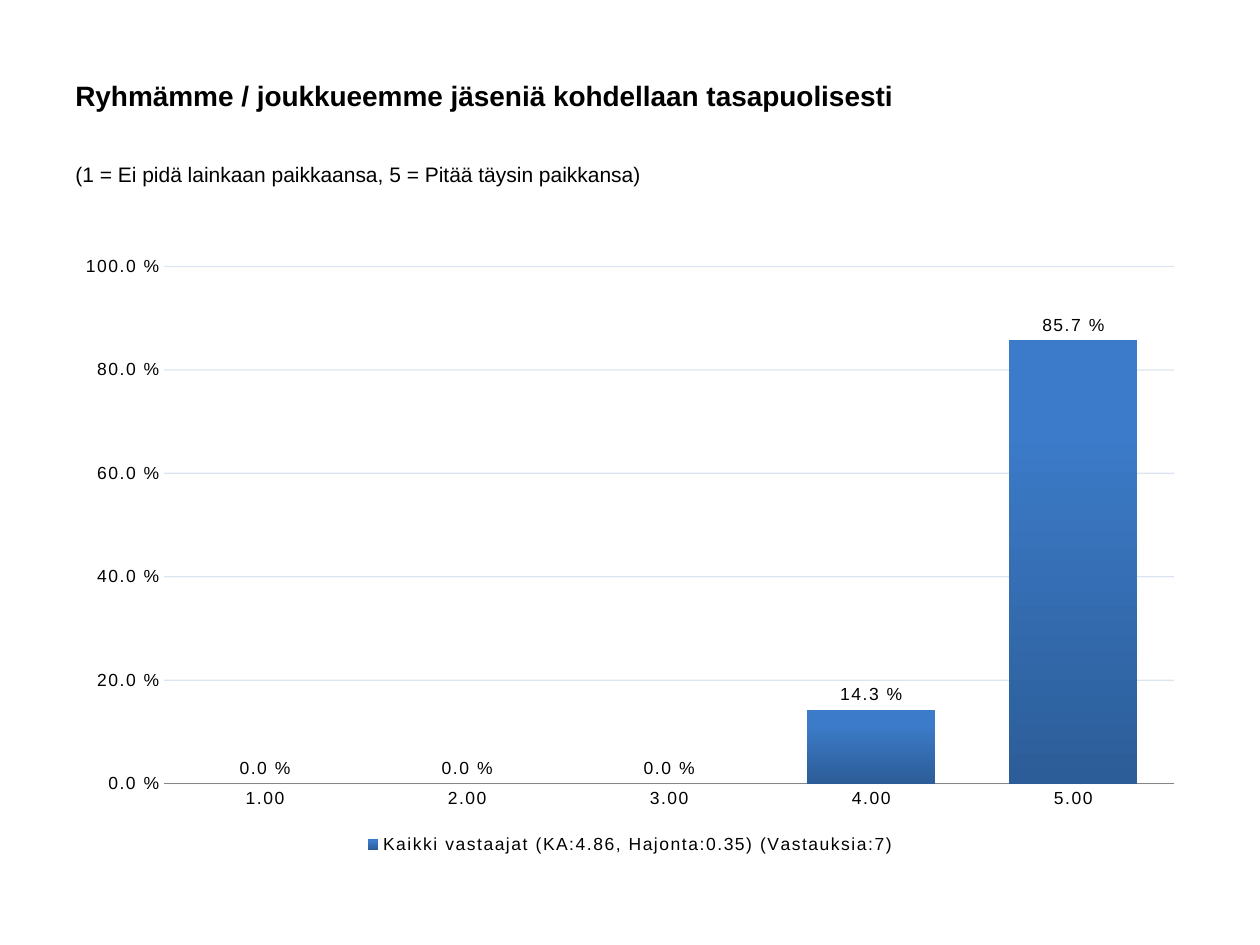
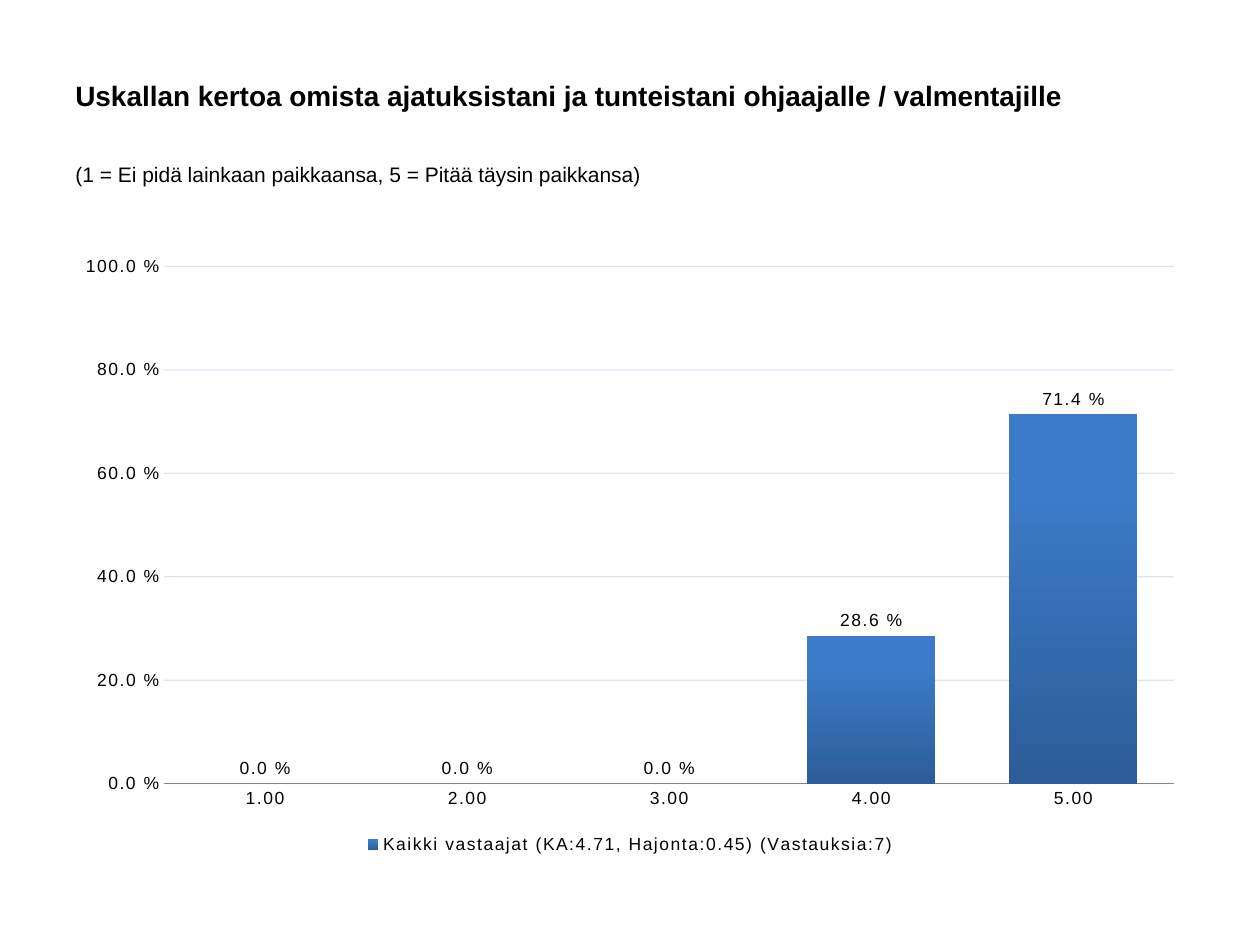
from dataclasses import dataclass

from lxml import etree
from pptx import Presentation
from pptx import util as u
from pptx.chart import data as cd
from pptx.dml.color import RGBColor
from pptx.enum import chart as ch
from pptx.enum import text as tx
from pptx.oxml import ns


@dataclass(frozen=True)
class Theme:
    font: str = "Arial"
    ink: str = "000000"
    grid: str = "4F81BD"
    axis: str = "868686"
    low: str = "2C5D98"
    high: str = "3C7BC9"
    title: int = 16
    note: int = 12
    chart: int = 10
    track: int = 100  # chart letter spacing, hundredths of a point


LOOK = Theme()
WIDE, HIGH = u.Inches(10), u.Inches(7.5)
COLS, ROWS = 20, 100

# left, top, width, height in columns and rows
HEAD = (1, 4.8, 18, 10.53)
NOTE = (1, 16.4, 18, 7.87)
PLOT = (1, 25.87, 18, 65.07)
# inner plot area as shares of the chart
INNER = {"x": 0.089, "y": 0.036, "w": 0.891, "h": 0.841}

SCALE = "(1 = Ei pidä lainkaan paikkaansa, 5 = Pitää täysin paikkansa)"
CATS = ["1.00", "2.00", "3.00", "4.00", "5.00"]
FORMAT = r"0.0\ %"
PAGES = [
    ("Ryhmämme / joukkueemme jäseniä kohdellaan tasapuolisesti",
     "Kaikki vastaajat (KA:4.86, Hajonta:0.35) (Vastauksia:7)",
     [0, 0, 0, 0.143, 0.857]),
    ("Uskallan kertoa omista ajatuksistani ja tunteistani ohjaajalle / valmentajille",
     "Kaikki vastaajat (KA:4.71, Hajonta:0.45) (Vastauksia:7)",
     [0, 0, 0, 0.286, 0.714]),
]


def place(box):
    """Turn a box in grid units into lengths on the slide."""
    left, top, width, height = box
    return (int(left * WIDE / COLS), int(top * HIGH / ROWS),
            int(width * WIDE / COLS), int(height * HIGH / ROWS))


def rgb(code):
    return RGBColor.from_string(code)


def style(font, size, bold=False):
    font.name = LOOK.font
    font.size = u.Pt(size)
    font.bold = bold
    font.color.rgb = rgb(LOOK.ink)


def write(slide, box, words, size, bold=False, anchor=tx.MSO_ANCHOR.TOP, before=0):
    frame = slide.shapes.add_textbox(*place(box)).text_frame
    frame.word_wrap = True
    frame.vertical_anchor = anchor
    para = frame.paragraphs[0]
    para.space_before = u.Pt(before)
    run = para.add_run()
    run.text = words
    style(run.font, size, bold)


def label(font):
    """Style chart text, with its wide letter spacing."""
    style(font, LOOK.chart)
    font._rPr.set("spc", str(LOOK.track))


def fix_plot(chart):
    """Pin the inner plot area to its shares of the chart."""
    area = chart._chartSpace.chart.plotArea
    for old in area.findall(ns.qn("c:layout")):
        area.remove(old)
    layout = etree.Element(ns.qn("c:layout"))
    area.insert(0, layout)
    manual = etree.SubElement(layout, ns.qn("c:manualLayout"))
    parts = {"layoutTarget": "inner", "xMode": "edge", "yMode": "edge", **INNER}
    for tag, val in parts.items():
        etree.SubElement(manual, ns.qn("c:" + tag)).set("val", str(val))


def style_axes(chart):
    cat, val = chart.category_axis, chart.value_axis
    for axis in (cat, val):
        axis.major_tick_mark = axis.minor_tick_mark = ch.XL_TICK_MARK.NONE
        label(axis.tick_labels.font)
    cat.has_major_gridlines = False
    cat.format.line.color.rgb = rgb(LOOK.axis)
    cat.format.line.width = u.Pt(0.75)
    val.minimum_scale, val.maximum_scale, val.major_unit = 0, 1, 0.2
    val.tick_labels.number_format = FORMAT
    val.tick_labels.number_format_is_linked = False
    val.format.line.fill.background()
    val.has_major_gridlines = True
    line = val.major_gridlines.format.line
    line.width = u.Pt(0.75)
    line.color.rgb = rgb(LOOK.grid)
    tint = val.major_gridlines._xAx.find(".//" + ns.qn("c:majorGridlines"))
    tint = tint.find(".//" + ns.qn("a:srgbClr"))
    etree.SubElement(tint, ns.qn("a:alpha")).set("val", "20000")


def style_bars(plot):
    plot.gap_width = 58
    plot.vary_by_categories = False
    fill = plot.series[0].format.fill
    fill.gradient()
    fill.gradient_angle = 90
    stops = ((0, LOOK.low), (0.8, LOOK.high))
    for stop, (spot, code) in zip(fill.gradient_stops, stops):
        stop.position = spot
        stop.color.rgb = rgb(code)
    plot.has_data_labels = True
    marks = plot.data_labels
    marks.show_value = True
    marks.number_format = FORMAT
    marks.number_format_is_linked = False
    marks.position = ch.XL_LABEL_POSITION.OUTSIDE_END
    label(marks.font)


def add_bars(slide, box, name, vals):
    data = cd.CategoryChartData(number_format=FORMAT)
    data.categories = CATS
    data.add_series(name, vals)
    kind = ch.XL_CHART_TYPE.COLUMN_CLUSTERED
    chart = slide.shapes.add_chart(kind, *place(box), data).chart
    chart.has_title = False
    label(chart.font)
    chart.has_legend = True
    chart.legend.position = ch.XL_LEGEND_POSITION.BOTTOM
    chart.legend.include_in_layout = False
    label(chart.legend.font)
    style_axes(chart)
    style_bars(chart.plots[0])
    fix_plot(chart)


def add_page(deck, title, name, vals):
    slide = deck.slides.add_slide(deck.slide_layouts[6])
    write(slide, HEAD, title, LOOK.title, bold=True, anchor=tx.MSO_ANCHOR.MIDDLE)
    write(slide, NOTE, SCALE, LOOK.note, before=0.2 * LOOK.note)
    add_bars(slide, PLOT, name, vals)


def main():
    deck = Presentation()
    deck.slide_width, deck.slide_height = WIDE, HIGH
    for page in PAGES:
        add_page(deck, *page)
    deck.save("out.pptx")


if __name__ == "__main__":
    main()
